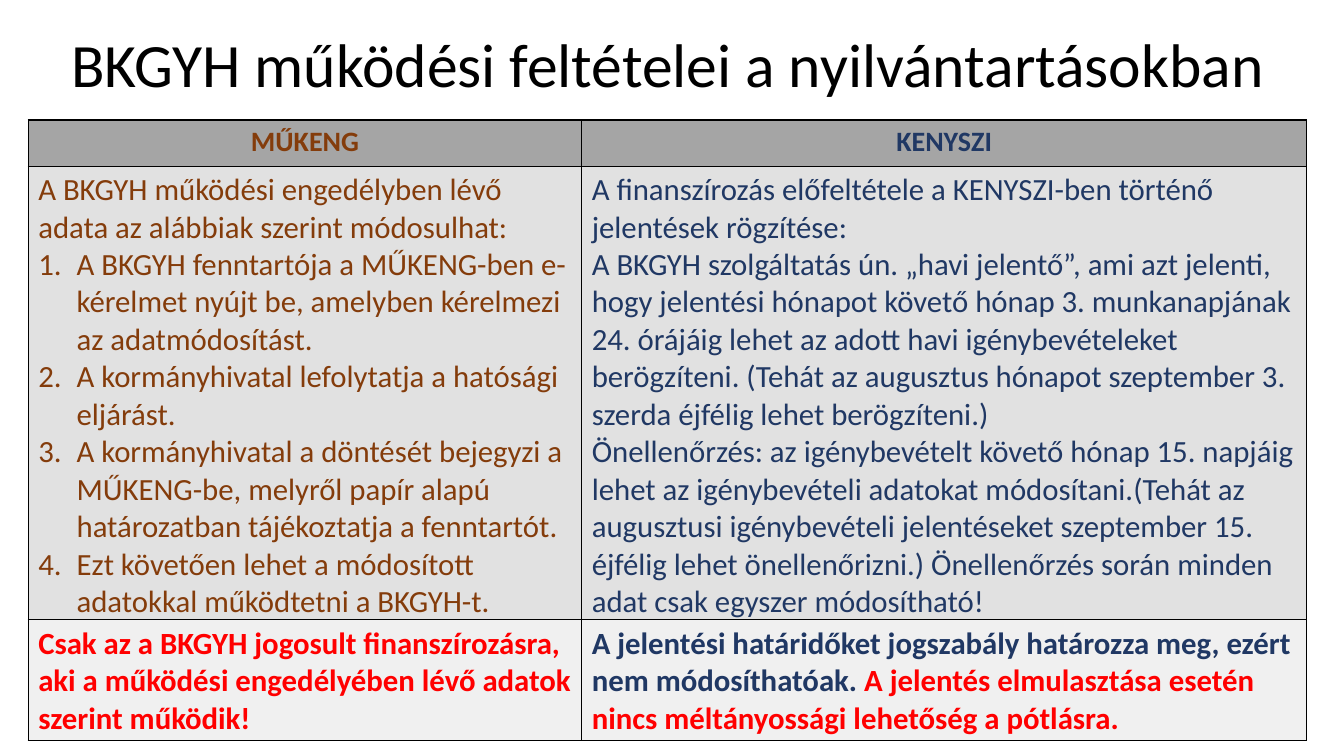
from lxml.etree import SubElement
from pptx import Presentation
from pptx.dml.color import RGBColor
from pptx.enum.text import MSO_ANCHOR, PP_ALIGN
from pptx.oxml.ns import qn
from pptx.util import Inches, Pt

BLACK = RGBColor(0x00, 0x00, 0x00)
BROWN = RGBColor(0x84, 0x3C, 0x0B)
NAVY = RGBColor(0x20, 0x38, 0x64)
RED = RGBColor(0xFF, 0x00, 0x00)
HEADER_GREY = RGBColor(0xA5, 0xA5, 0xA5)
BODY_GREY = RGBColor(0xE1, 0xE1, 0xE1)
PALE_GREY = RGBColor(0xF0, 0xF0, 0xF0)

FONT = "Calibri"
SLIDE_SIZE = (13.33, 7.5)
TITLE = "BKGYH működési feltételei a nyilvántartásokban"
TITLE_BOX = (0.61, 0, 12.22, 1.34)
TABLE_ORIGIN = (0.28, 1.19)
COLUMN_WIDTHS = (5.49, 7.19)
NUMBER_INDENT = Inches(0.38)

HEADERS = [[[("MŰKENG", BROWN)]], [[("KENYSZI", NAVY)]]]
LICENCE_INTRO = "A BKGYH működési engedélyben lévő adata az alábbiak szerint módosulhat:"
LICENCE_STEPS = [
    "A BKGYH fenntartója a MŰKENG-ben e-kérelmet nyújt be, amelyben kérelmezi az adatmódosítást.",
    "A kormányhivatal lefolytatja a hatósági eljárást.",
    "A kormányhivatal a döntését bejegyzi a MŰKENG-be, melyről papír alapú "
    "határozatban tájékoztatja a fenntartót.",
    "Ezt követően lehet a módosított adatokkal működtetni a BKGYH-t.",
]
REPORTING = [
    "A finanszírozás előfeltétele a KENYSZI-ben történő jelentések rögzítése:",
    "A BKGYH szolgáltatás ún. „havi jelentő”, ami azt jelenti, hogy jelentési hónapot követő "
    "hónap 3. munkanapjának 24. órájáig lehet az adott havi igénybevételeket berögzíteni. "
    "(Tehát az augusztus hónapot szeptember 3. szerda éjfélig lehet berögzíteni.)",
    "Önellenőrzés: az igénybevételt követő hónap 15. napjáig lehet az igénybevételi adatokat "
    "módosítani.(Tehát az augusztusi igénybevételi jelentéseket szeptember 15. éjfélig lehet "
    "önellenőrizni.) Önellenőrzés során minden adat csak egyszer módosítható!",
]
BODIES = [
    [[(text, BROWN)] for text in [LICENCE_INTRO, *LICENCE_STEPS]],
    [[(text, NAVY)] for text in REPORTING],
]
WARNINGS = [
    [[("Csak az a BKGYH jogosult finanszírozásra, aki a működési engedélyében lévő "
       "adatok szerint működik!", RED)]],
    [[("A jelentési határidőket jogszabály határozza meg, ezért nem módosíthatóak. ", NAVY),
      ("A jelentés elmulasztása esetén nincs méltányossági lehetőség a pótlásra.", RED)]],
]
ROWS = [
    {"height": 0.46, "cells": HEADERS, "fill": HEADER_GREY, "size": 20,
     "bold": True, "align": PP_ALIGN.CENTER},
    {"height": 4.21, "cells": BODIES, "fill": BODY_GREY, "size": 22,
     "bold": False, "align": PP_ALIGN.LEFT},
    {"height": 1.15, "cells": WARNINGS, "fill": PALE_GREY, "size": 22,
     "bold": True, "align": PP_ALIGN.LEFT},
]


def write_runs(paragraph, runs, size, bold=False):
    for text, color in runs:
        run = paragraph.add_run()
        run.text = text
        run.font.name = FONT
        run.font.size = Pt(size)
        run.font.bold = bold
        run.font.color.rgb = color


def add_title(slide):
    shape = slide.shapes.add_textbox(*map(Inches, TITLE_BOX))
    frame = shape.text_frame
    frame.word_wrap = True
    frame.vertical_anchor = MSO_ANCHOR.MIDDLE
    paragraph = frame.paragraphs[0]
    paragraph.line_spacing = 0.9
    write_runs(paragraph, [(TITLE, BLACK)], 44)


def add_borders(cell):
    properties = cell._tc.get_or_add_tcPr()
    for position, side in enumerate(("a:lnL", "a:lnR", "a:lnT", "a:lnB")):
        line = SubElement(properties, qn(side), w=str(Pt(1)))
        fill = SubElement(line, qn("a:solidFill"))
        SubElement(fill, qn("a:srgbClr"), val=str(BLACK))
        properties.insert(position, line)


def number_paragraph(paragraph):
    properties = paragraph._p.get_or_add_pPr()
    properties.set("marL", str(NUMBER_INDENT))
    properties.set("indent", str(-NUMBER_INDENT))
    SubElement(properties, qn("a:buFont"), typeface="+mj-lt")
    SubElement(properties, qn("a:buAutoNum"), type="arabicPeriod")


def fill_cell(cell, paragraphs, row):
    cell.fill.solid()
    cell.fill.fore_color.rgb = row["fill"]
    add_borders(cell)
    frame = cell.text_frame
    for index, runs in enumerate(paragraphs):
        paragraph = frame.add_paragraph() if index else frame.paragraphs[0]
        paragraph.alignment = row["align"]
        write_runs(paragraph, runs, row["size"], row["bold"])


def add_comparison(slide):
    heights = [row["height"] for row in ROWS]
    size = (sum(COLUMN_WIDTHS), sum(heights))
    frame = slide.shapes.add_table(
        len(ROWS), len(COLUMN_WIDTHS), *map(Inches, TABLE_ORIGIN + size))
    table = frame.table
    for column, width in zip(table.columns, COLUMN_WIDTHS):
        column.width = Inches(width)
    for row_index, row in enumerate(ROWS):
        table.rows[row_index].height = Inches(row["height"])
        for column_index, paragraphs in enumerate(row["cells"]):
            fill_cell(table.cell(row_index, column_index), paragraphs, row)
    for paragraph in table.cell(1, 0).text_frame.paragraphs[1:]:
        number_paragraph(paragraph)


def main():
    """Build the slide comparing the two registers."""
    presentation = Presentation()
    presentation.slide_width, presentation.slide_height = map(Inches, SLIDE_SIZE)
    slide = presentation.slides.add_slide(presentation.slide_layouts[6])
    add_title(slide)
    add_comparison(slide)
    presentation.save("out.pptx")


if __name__ == "__main__":
    main()
